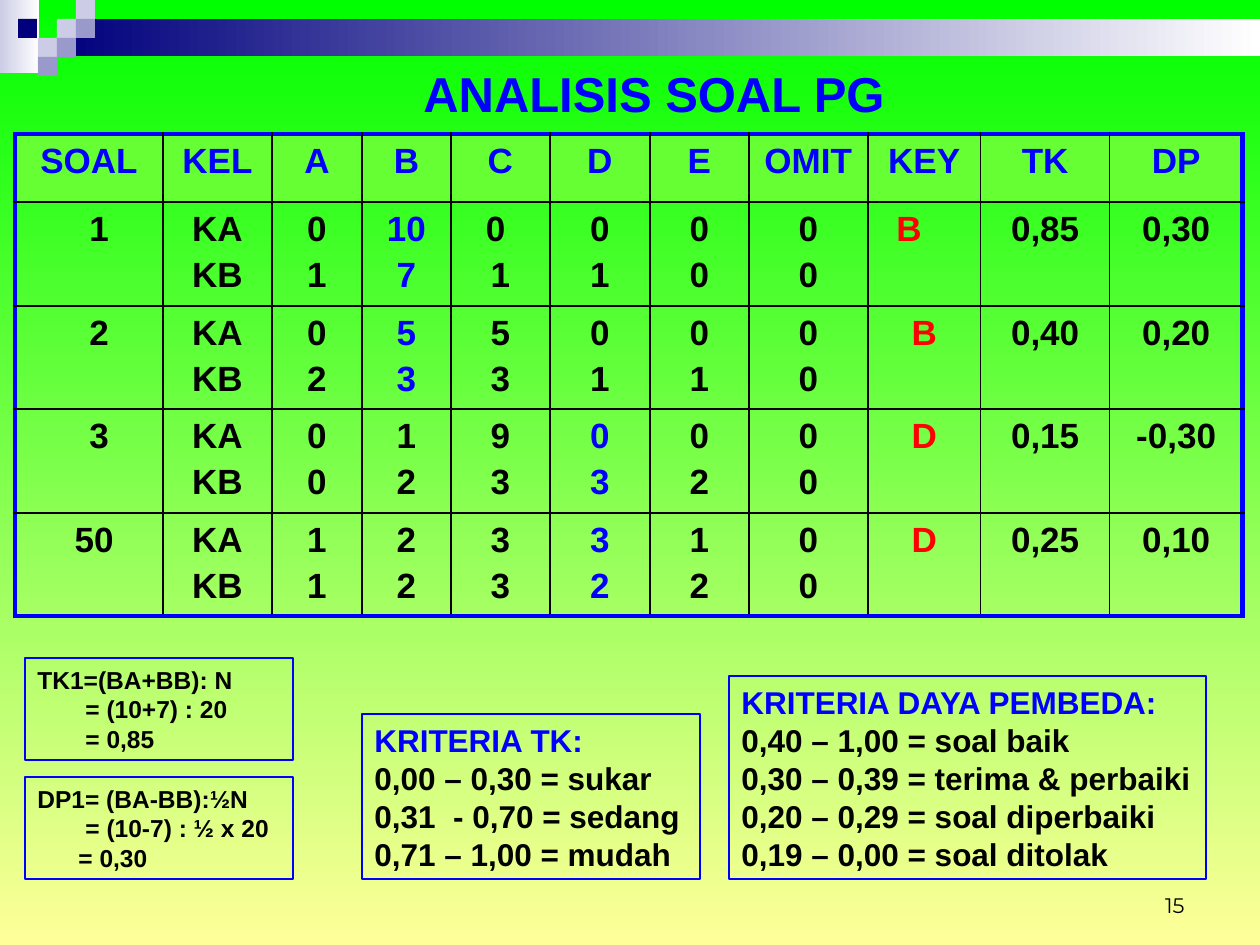
"""Build the ANALISIS SOAL PG item-analysis slide."""
from lxml import etree
from pptx import Presentation, util as u
from pptx.dml.color import RGBColor
from pptx.enum import shapes, text
from pptx.oxml.ns import qn

BLUE = RGBColor(0x00, 0x00, 0xFF)
BLACK = RGBColor(0x00, 0x00, 0x00)
RED = RGBColor(0xFF, 0x00, 0x00)
WHITE = RGBColor(0xFF, 0xFF, 0xFF)
NAVY = RGBColor(0x00, 0x00, 0x7D)
PALE = RGBColor(0xCC, 0xCC, 0xE6)
LILAC = RGBColor(0x99, 0x99, 0xCC)
GREEN = RGBColor(0x00, 0xFF, 0x00)
YELLOW = RGBColor(0xFF, 0xFF, 0x99)
LIME = RGBColor(0x66, 0xFF, 0x33)

TITLE = "ANALISIS SOAL PG"
HEADER = ("SOAL", "KEL", "A", "B", "C", "D", "E", "OMIT", "KEY", "TK", "DP")
ITEMS = [
    ("1", "KA\nKB", "0\n1", "10\n7", "0 \n1", "0\n1", "0\n0", "0\n0", "B", "0,85", "0,30"),
    ("2", "KA\nKB", "0\n2", "5\n3", "5\n3", "0\n1", "0\n1", "0\n0", "B", "0,40", "0,20"),
    ("3", "KA\nKB", "0\n0", "1\n2", "9\n3", "0\n3", "0\n2", "0\n0", "D", "0,15", "-0,30"),
    ("50", "KA\nKB", "1\n1", "2\n2", "3\n3", "3\n2", "1\n2", "0\n0", "D", "0,25", "0,10"),
]
COLUMNS = (148, 109, 90, 89, 99, 100, 99, 119, 113, 129, 133)
ROWS = (68, 104, 103, 104, 103)
INSET = 13
EXTRA_INSETS = {
    (1, 0): {"margin_left": 20}, (2, 0): {"margin_left": 20},
    (3, 0): {"margin_left": 20}, (4, 0): {"margin_left": 10},
    (1, 8): {"margin_right": 30},
}

FORMULA = {"size": 14, "pitch": 16.9, "heading": BLACK}
CRITERIA = {"size": 18, "pitch": 21.7, "heading": BLUE}
NOTES = [
    ((25, 658, 268, 102), FORMULA,
     [("TK1=(BA+BB): N", 0), ("= (10+7) : 20", 48), ("= 0,85", 48)]),
    ((25, 777, 268, 102), FORMULA,
     [("DP1= (BA-BB):½N", 0), ("= (10-7) : ½ x 20", 48), ("= 0,30", 41)]),
    ((362, 714, 338, 165), CRITERIA,
     [("KRITERIA TK:", 0), ("0,00 – 0,30 = sukar", 0),
      ("0,31  - 0,70 = sedang", 0), ("0,71 – 1,00 = mudah", 0)]),
    ((729, 676, 477, 203), CRITERIA,
     [("KRITERIA DAYA PEMBEDA:", 0), ("0,40 – 1,00 = soal baik", 0),
      ("0,30 – 0,39 = terima & perbaiki", 0),
      ("0,20 – 0,29 = soal diperbaiki", 0), ("0,19 – 0,00 = soal ditolak", 0)]),
]

BANDS = [((0, 0, 39, 73), PALE, WHITE), ((57, 19, 1203, 37), NAVY, WHITE)]
SQUARE = 19
SQUARES = [(57, 19, PALE), (76, 0, PALE), (76, 19, LILAC), (38, 38, PALE),
           (18, 19, NAVY), (57, 38, LILAC), (38, 57, LILAC)]


def px(length):
    return u.Emu(round(length * 914400 / 126))


def apply(target, **values):
    for name, value in values.items():
        setattr(target, name, value)


def style(para, size, color, name="Arial", bold=True, **layout):
    apply(para, **layout)
    apply(para.font, name=name, size=u.Pt(size), bold=bold)
    para.font.color.rgb = color


def blend(fill, start, end, angle):
    fill.gradient()
    fill.gradient_angle = angle
    for stop, color, position in zip(fill.gradient_stops, (start, end), (0, 1)):
        stop.color.rgb = color
        stop.position = position


def add_box(page, place):
    box = page.shapes.add_shape(shapes.MSO_SHAPE.RECTANGLE, *map(px, place))
    box.shadow.inherit = False
    box.line.fill.background()
    return box


def add_decoration(page):
    for place, start, end in BANDS:
        blend(add_box(page, place).fill, start, end, 0)
    for left, top, color in SQUARES:
        fill = add_box(page, (left, top, SQUARE, SQUARE)).fill
        fill.solid()
        fill.fore_color.rgb = color


def add_borders(cell, outer):
    for side in ("L", "R", "T", "B"):
        color, width = (BLUE, 3) if side in outer else (BLACK, 1)
        line = etree.SubElement(cell._tc.get_or_add_tcPr(), qn(f"a:ln{side}"),
                                w=str(u.Pt(width)))
        solid = etree.SubElement(line, qn("a:solidFill"))
        etree.SubElement(solid, qn("a:srgbClr"), val=str(color))


def cell_color(row, column, key):
    if row == 0 or HEADER[column] == key:
        return BLUE
    return RED if HEADER[column] == "KEY" else BLACK


def add_items(page):
    frame = page.shapes.add_table(len(ROWS), len(COLUMNS),
                                  *map(px, (15, 134, sum(COLUMNS), sum(ROWS))))
    table = frame.table
    apply(table, first_row=False, horz_banding=False)
    for column, width in zip(table.columns, COLUMNS):
        column.width = px(width)
    for r, values in enumerate([HEADER] + ITEMS):
        table.rows[r].height = px(ROWS[r])
        for c, value in enumerate(values):
            cell = table.cell(r, c)
            cell.text = value
            for side, extra in EXTRA_INSETS.get((r, c), {}).items():
                setattr(cell, side, px(INSET + extra))
            edges = {"L": c == 0, "R": c == len(COLUMNS) - 1,
                     "T": r == 0, "B": r == len(ROWS) - 1}
            add_borders(cell, [side for side, outer in edges.items() if outer])
            if r == 0:
                cell.fill.solid()
                cell.fill.fore_color.rgb = LIME
            else:
                cell.fill.background()
            color = cell_color(r, c, values[HEADER.index("KEY")])
            for i, para in enumerate(cell.text_frame.paragraphs):
                style(para, 20, color, alignment=text.PP_ALIGN.CENTER,
                      line_spacing=u.Pt(23), space_before=u.Pt(3.3 if i else 0))


def add_note(page, place, look, lines):
    box = add_box(page, place)
    box.fill.background()
    box.line.color.rgb = BLUE
    box.line.width = u.Pt(0.75)
    frame = box.text_frame
    apply(frame, word_wrap=True, margin_right=0,
          vertical_anchor=text.MSO_ANCHOR.MIDDLE)
    frame.text = "\n".join(line for line, indent in lines)
    for i, (para, (line, indent)) in enumerate(zip(frame.paragraphs, lines)):
        para._p.get_or_add_pPr().set("marL", str(px(indent)))
        style(para, look["size"], BLACK if i else look["heading"],
              alignment=text.PP_ALIGN.LEFT, line_spacing=u.Pt(look["pitch"]))


def main():
    deck = Presentation()
    apply(deck, slide_width=px(1260), slide_height=px(945))
    page = deck.slides.add_slide(deck.slide_layouts[5])
    blend(page.background.fill, GREEN, YELLOW, 270)
    add_decoration(page)
    add_items(page)

    title = page.shapes.title
    apply(title, left=px(272), top=px(57), width=px(764), height=px(72))
    title.text_frame.text = TITLE
    title.text_frame.vertical_anchor = text.MSO_ANCHOR.TOP
    style(title.text_frame.paragraphs[0], 28, BLUE,
          alignment=text.PP_ALIGN.CENTER, space_before=u.Pt(0))

    for place, look, lines in NOTES:
        add_note(page, place, look, lines)

    number = page.shapes.add_textbox(*map(px, (903, 861, 294, 63))).text_frame
    apply(number, text="15", word_wrap=True,
          vertical_anchor=text.MSO_ANCHOR.BOTTOM)
    style(number.paragraphs[0], 12, BLACK, "Montserrat", False,
          alignment=text.PP_ALIGN.RIGHT)
    deck.save("out.pptx")


if __name__ == "__main__":
    main()
